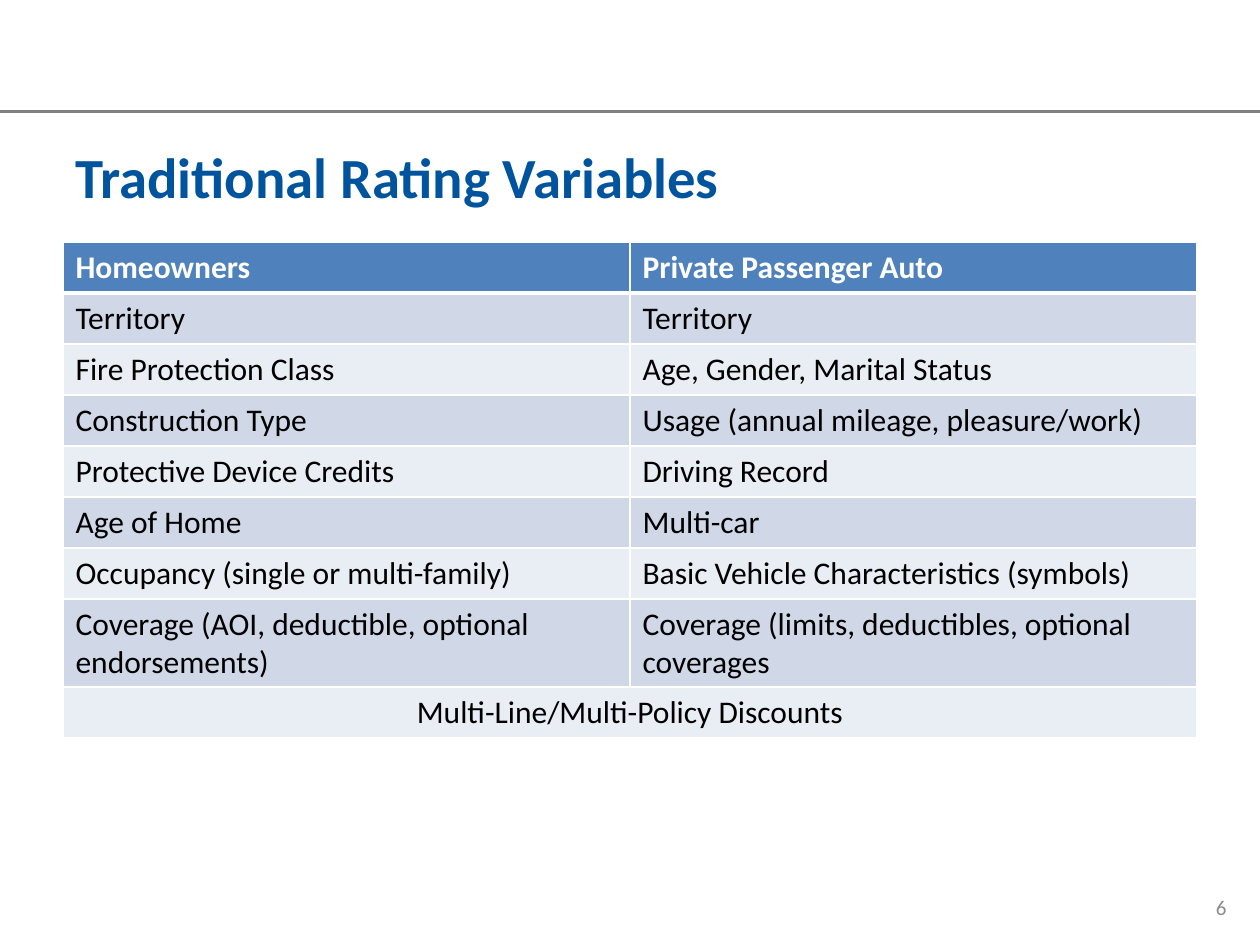
from lxml import etree
from pptx import Presentation
from pptx.dml.color import RGBColor
from pptx.enum.shapes import MSO_CONNECTOR
from pptx.enum.text import MSO_ANCHOR, PP_ALIGN
from pptx.oxml.ns import qn
from pptx.util import Emu, Pt

LEFT, RIGHT, CENTER = PP_ALIGN.LEFT, PP_ALIGN.RIGHT, PP_ALIGN.CENTER
MIDDLE = MSO_ANCHOR.MIDDLE
STRAIGHT = MSO_CONNECTOR.STRAIGHT

ROWS = [
    ("Homeowners", "Private Passenger Auto"),
    ("Territory", "Territory"),
    ("Fire Protection Class", "Age, Gender, Marital Status"),
    ("Construction Type", "Usage (annual mileage, pleasure/work)"),
    ("Protective Device Credits", "Driving Record"),
    ("Age of Home", "Multi-car"),
    ("Occupancy (single or multi-family)",
     "Basic Vehicle Characteristics (symbols)"),
    ("Coverage (AOI, deductible, optional endorsements)",
     "Coverage (limits, deductibles, optional coverages"),
    ("Multi-Line/Multi-Policy Discounts",),
]


def px(n):
    return Emu(round(n * 914400 / 126))


def color(code):
    return RGBColor.from_string(code)


class Deck:
    font = "Calibri"
    head = "4F81BD"
    bands = ("E9EDF4", "D0D8E8")
    edge = "FFFFFF"

    def __init__(self, wide, high):
        self.prs = Presentation()
        self.prs.slide_width, self.prs.slide_height = px(wide), px(high)
        self.slide = self.prs.slides.add_slide(self.prs.slide_layouts[6])

    def label(self, frame, words, size, ink, bold=False, align=LEFT):
        para = frame.paragraphs[0]
        para.text = words
        para.alignment = align
        font = para.font
        font.name, font.size, font.bold = self.font, Pt(size), bold
        font.color.rgb = color(ink)

    def rule(self, x1, x2, y, ink, width):
        line = self.slide.shapes.add_connector(
            STRAIGHT, px(x1), px(y), px(x2), px(y))
        line.line.color.rgb = color(ink)
        line.line.width = Pt(width)
        etree.SubElement(line._element.spPr, qn("a:effectLst"))

    def text(self, x, y, w, h, *args, **style):
        box = self.slide.shapes.add_textbox(px(x), px(y), px(w), px(h))
        frame = box.text_frame
        frame.word_wrap = True
        frame.vertical_anchor = MIDDLE
        self.label(frame, *args, **style)

    def border(self, cell, side, width):
        props = cell._tc.get_or_add_tcPr()
        line = etree.SubElement(props, qn("a:ln" + side), w=str(Pt(width)))
        fill = etree.SubElement(line, qn("a:solidFill"))
        etree.SubElement(fill, qn("a:srgbClr"), val=self.edge)

    def table(self, x, y, w, step, rows, size):
        cols = len(rows[0])
        table = self.slide.shapes.add_table(
            len(rows), cols, px(x), px(y), px(w),
            px(step * len(rows))).table
        for r, words in enumerate(rows):
            table.rows[r].height = px(step)
            top = r == 0
            # The header is set off by a thick edge below it
            widths = {"L": 1, "R": 1, "T": 3 if r == 1 else 1,
                      "B": 3 if top else 1}
            for c in range(cols):
                cell = table.cell(r, c)
                for side, width in widths.items():
                    self.border(cell, side, width)
                cell.fill.solid()
                cell.fill.fore_color.rgb = color(
                    self.head if top else self.bands[r % 2])
            # A row with one entry spans the table
            whole = len(words) < cols
            if whole:
                table.cell(r, 0).merge(table.cell(r, cols - 1))
            for c, word in enumerate(words):
                self.label(table.cell(r, c).text_frame, word, size,
                           "FFFFFF" if top else "000000", bold=top,
                           align=CENTER if whole else LEFT)


def main():
    deck = Deck(1260, 945)
    # Header rule and title
    deck.rule(-53, 1302, 112, "808080", 1.75)
    deck.text(63, 141, 1134, 70, "Traditional Rating Variables",
              32.4, "00549E", bold=True)
    # Slide number
    deck.text(945, 882, 294, 50, "6", 12, "8C8C8C", align=RIGHT)
    # Rating variables
    deck.table(63, 242, 1134, 51, ROWS, 18)
    deck.prs.save("out.pptx")


if __name__ == "__main__":
    main()
